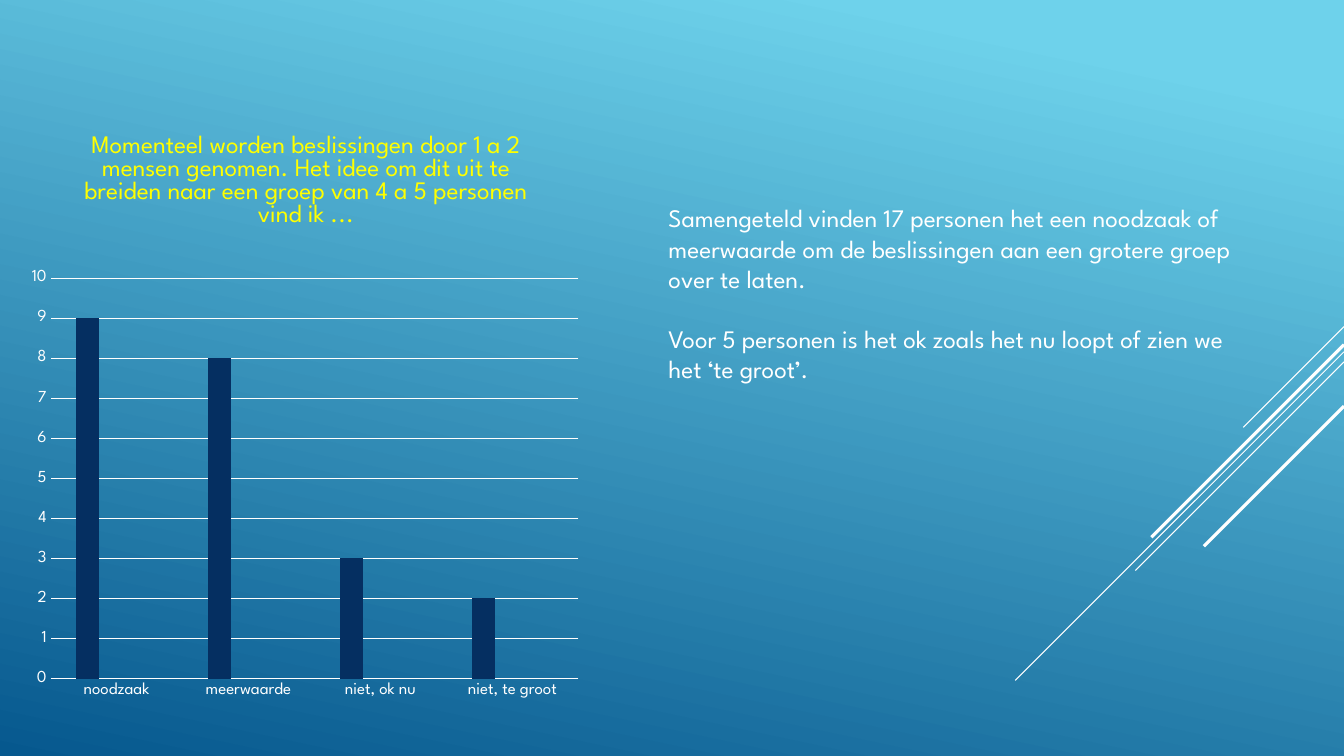
"""Build a slide with a column chart of survey answers and a short conclusion."""
import pptx
import pptx.chart.data
import pptx.dml.color
import pptx.enum.chart
import pptx.enum.shapes
import pptx.enum.text
import pptx.oxml
import pptx.oxml.ns
import pptx.util
from pptx.util import Inches

COLOURS = {"sky": "6ED2EB", "deep": "06588E", "white": "FFFFFF", "title": "FFFF00",
           "navy": "052F61", "magenta": "A50E82", "teal": "14967C"}
FONT = "League Spartan"


def colour(name):
    return pptx.dml.color.RGBColor.from_string(COLOURS[name])


def format_font(font, size, name):
    for attribute, value in {"name": FONT, "size": pptx.util.Pt(size), "bold": False}.items():
        setattr(font, attribute, value)
    font.color.rgb = colour(name)


presentation = pptx.Presentation()
presentation.slide_width = Inches(13.33)
presentation.slide_height = Inches(7.5)
slide = presentation.slides.add_slide(presentation.slide_layouts[1])
slide.shapes.title.element.getparent().remove(slide.shapes.title.element)

background = slide.background.fill
background.gradient()
background.gradient_angle = 258
for stop, (position, name) in zip(background.gradient_stops, [(0.1, "sky"), (1, "deep")]):
    stop.position = position
    stop.color.rgb = colour(name)

diagonals = [(3.24, 1, 0.75), (3.49, 3.26, 0.75), (3.59, 2.07, 0.75),
             (3.42, 1.91, 2.25), (4.03, 1.39, 2.25)]
for top, reach, width in diagonals:
    diagonal = slide.shapes.add_connector(
        pptx.enum.shapes.MSO_CONNECTOR.STRAIGHT,
        Inches(13.33), Inches(top), Inches(13.33 - reach), Inches(top + reach))
    diagonal.line.color.rgb = colour("white")
    diagonal.line.width = pptx.util.Pt(width)
    diagonal.element.spPr.append(pptx.oxml.parse_xml(
        f'<a:effectLst {pptx.oxml.ns.nsdecls("a")}/>'))

chart_data = pptx.chart.data.CategoryChartData()
chart_data.categories = ["noodzaak", "meerwaarde", "niet, ok nu", "niet, te groot"]
chart_data.add_series("Series 1", [9, 8, 3, 2])
chart_data.add_series("Series 2", [None] * 4)
chart_data.add_series("Series 3", [None] * 4)
chart = slide.shapes.add_chart(
    pptx.enum.chart.XL_CHART_TYPE.COLUMN_CLUSTERED,
    Inches(0.22), Inches(1.1), Inches(5.63), Inches(5.93), chart_data).chart
format_font(chart.font, 10, "white")
chart.has_legend = False
chart.has_title = True
chart.chart_title.include_in_layout = False
title = chart.chart_title.text_frame
title.text = ("Momenteel worden beslissingen door 1 a 2 mensen genomen. Het idee om dit uit te "
              "breiden naar een groep van 4 a 5 personen vind ik ...")
format_font(title.paragraphs[0].runs[0].font, 18, "title")

plot = chart.plots[0]
for attribute, value in {"gap_width": 219, "overlap": -27, "vary_by_categories": False}.items():
    setattr(plot, attribute, value)
for series, name in zip(plot.series, ["navy", "magenta", "teal"]):
    series.format.fill.solid()
    series.format.fill.fore_color.rgb = colour(name)

for axis in (chart.category_axis, chart.value_axis):
    axis.major_tick_mark = pptx.enum.chart.XL_TICK_MARK.NONE
    axis.minor_tick_mark = pptx.enum.chart.XL_TICK_MARK.NONE
    format_font(axis.tick_labels.font, 12, "white")
value_axis = chart.value_axis
for attribute, value in {"minimum_scale": 0, "maximum_scale": 10, "major_unit": 1}.items():
    setattr(value_axis, attribute, value)
value_axis.format.line.fill.background()
for line in (chart.category_axis.format.line, value_axis.major_gridlines.format.line):
    line.color.rgb = colour("white")
    line.width = pptx.util.Pt(0.75)

plot_area = chart.element.chart.plotArea
for layout in plot_area.findall(pptx.oxml.ns.qn("c:layout")):
    plot_area.remove(layout)
sizes = {"x": 0.05, "y": 0.28, "w": 0.93, "h": 0.67}
plot_area.insert(0, pptx.oxml.parse_xml(
    f'<c:layout {pptx.oxml.ns.nsdecls("c")}><c:manualLayout><c:layoutTarget val="inner"/>'
    '<c:xMode val="edge"/><c:yMode val="edge"/>'
    + "".join(f'<c:{key} val="{value}"/>' for key, value in sizes.items())
    + '</c:manualLayout></c:layout>'))

conclusion = slide.placeholders[1]
for attribute, value in {"left": 6.53, "top": 1.96, "width": 5.83, "height": 1.92}.items():
    setattr(conclusion, attribute, Inches(value))
frame = conclusion.text_frame
frame.text = ("Samengeteld vinden 17 personen het een noodzaak of meerwaarde om de beslissingen "
              "aan een grotere groep over te laten.\n"
              "Voor 5 personen is het ok zoals het nu loopt of zien we het ‘te groot’.")
frame.auto_size = pptx.enum.text.MSO_AUTO_SIZE.SHAPE_TO_FIT_TEXT
for paragraph, space in zip(frame.paragraphs, [0, 21.6]):
    paragraph.line_spacing = pptx.util.Pt(21.6)
    paragraph.space_before = pptx.util.Pt(space)
    format_font(paragraph.runs[0].font, 18, "white")
    properties = paragraph._p.get_or_add_pPr()
    properties.set("marL", "0")
    properties.set("indent", "0")
    properties.append(pptx.oxml.parse_xml(f'<a:buNone {pptx.oxml.ns.nsdecls("a")}/>'))

presentation.save("out.pptx")
